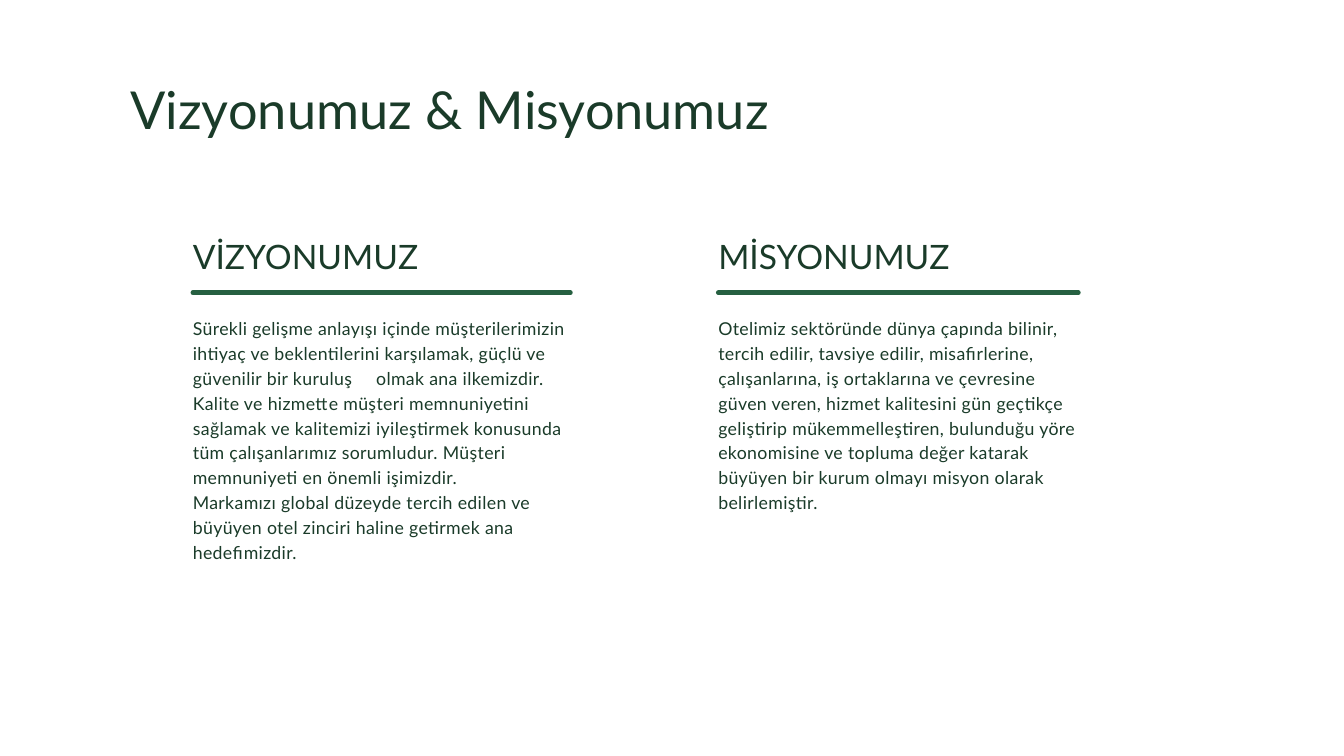
import dataclasses

import pptx
import pptx.dml.color
import pptx.enum.shapes
import pptx.enum.text
import pptx.oxml.ns
import pptx.util
from lxml import etree

Cm = pptx.util.Cm
Pt = pptx.util.Pt


@dataclasses.dataclass(frozen=True)
class Theme:
    font: str = "Lato"
    ink: str = "1A3B29"
    accent: str = "266041"
    paper: str = "FFFFFF"
    title_size: int = 56
    heading_size: int = 36
    body_size: int = 19
    leading: float = 1.4
    body_tracking: float = 0.4
    rule_width: int = 5


def rgb(code):
    return pptx.dml.color.RGBColor.from_string(code)


def write_text(paragraph, text, *, font, size, color, leading, tracking=0, tab=None):
    """Put formatted text in a paragraph; tab is a tab stop in centimetres."""
    if tab is not None:
        stops = etree.SubElement(paragraph._p.get_or_add_pPr(), pptx.oxml.ns.qn("a:tabLst"))
        etree.SubElement(stops, pptx.oxml.ns.qn("a:tab"), pos=str(Cm(tab)), algn="l")
    paragraph.line_spacing = Pt(size * leading)
    run = paragraph.add_run()
    run.text = text
    run.font.name = font
    run.font.size = Pt(size)
    run.font.color.rgb = rgb(color)
    if tracking:
        run._r.get_or_add_rPr().set("spc", str(round(tracking * 100)))


class SlideBuilder:
    def __init__(self, slide, theme):
        self.slide = slide
        self.theme = theme
        slide.background.fill.solid()
        slide.background.fill.fore_color.rgb = rgb(theme.paper)

    def text(self, left, top, width, height, paragraphs, size, tracking=0, tab=None):
        box = self.slide.shapes.add_textbox(Cm(left), Cm(top), Cm(width), Cm(height))
        frame = box.text_frame
        frame.word_wrap = True
        frame.auto_size = pptx.enum.text.MSO_AUTO_SIZE.NONE
        frame.margin_left = frame.margin_right = 0
        frame.margin_top = frame.margin_bottom = 0
        for index, content in enumerate(paragraphs):
            paragraph = frame.add_paragraph() if index else frame.paragraphs[0]
            write_text(paragraph, content, font=self.theme.font, size=size,
                       color=self.theme.ink, leading=self.theme.leading,
                       tracking=tracking, tab=tab if "\t" in content else None)

    def rule(self, left, top, width):
        line = self.slide.shapes.add_connector(
            pptx.enum.shapes.MSO_CONNECTOR.STRAIGHT,
            Cm(left), Cm(top), Cm(left + width), Cm(top))
        line.line.color.rgb = rgb(self.theme.accent)
        line.line.width = Pt(self.theme.rule_width)
        line.line._get_or_add_ln().set("cap", "rnd")
        etree.SubElement(line._element.spPr, pptx.oxml.ns.qn("a:effectLst"))

    def column(self, left, width, heading, body, body_height, tab=None):
        self.text(left, 8.66, width, 1.65, [heading], self.theme.heading_size)
        self.rule(left, 11.07, width)
        self.text(left, 11.89, width, body_height, body, self.theme.body_size,
                  tracking=self.theme.body_tracking, tab=tab)


VISION = [
    "Sürekli gelişme anlayışı içinde müşterilerimizin ihtiyaç ve beklentilerini "
    "karşılamak, güçlü ve güvenilir bir kuruluş\tolmak ana ilkemizdir.",
    "Kalite ve hizmette müşteri memnuniyetini sağlamak ve kalitemizi iyileştirmek "
    "konusunda tüm çalışanlarımız sorumludur. Müşteri memnuniyeti en önemli işimizdir.",
    "Markamızı global düzeyde tercih edilen ve büyüyen otel zinciri haline getirmek "
    "ana hedefimizdir.",
]
MISSION = [
    "Otelimiz sektöründe dünya çapında bilinir, tercih edilir, tavsiye edilir, "
    "misafirlerine, çalışanlarına, iş ortaklarına ve çevresine güven veren, hizmet "
    "kalitesini gün geçtikçe geliştirip mükemmelleştiren, bulunduğu yöre ekonomisine "
    "ve topluma değer katarak büyüyen bir kurum olmayı misyon olarak belirlemiştir.",
]


def main():
    deck = pptx.Presentation()
    deck.slide_width, deck.slide_height = Cm(50.8), Cm(28.58)
    theme = Theme()
    builder = SlideBuilder(deck.slides.add_slide(deck.slide_layouts[6]), theme)

    # Title
    builder.text(4.93, 2.54, 27.76, 2.67, ["Vizyonumuz & Misyonumuz"], theme.title_size)

    # Vision and mission columns
    builder.column(7.29, 14.27, "VİZYONUMUZ", VISION, 11.99, tab=6.93)
    builder.column(27.15, 13.61, "MİSYONUMUZ", MISSION, 9.19)

    deck.save("out.pptx")


if __name__ == "__main__":
    main()
